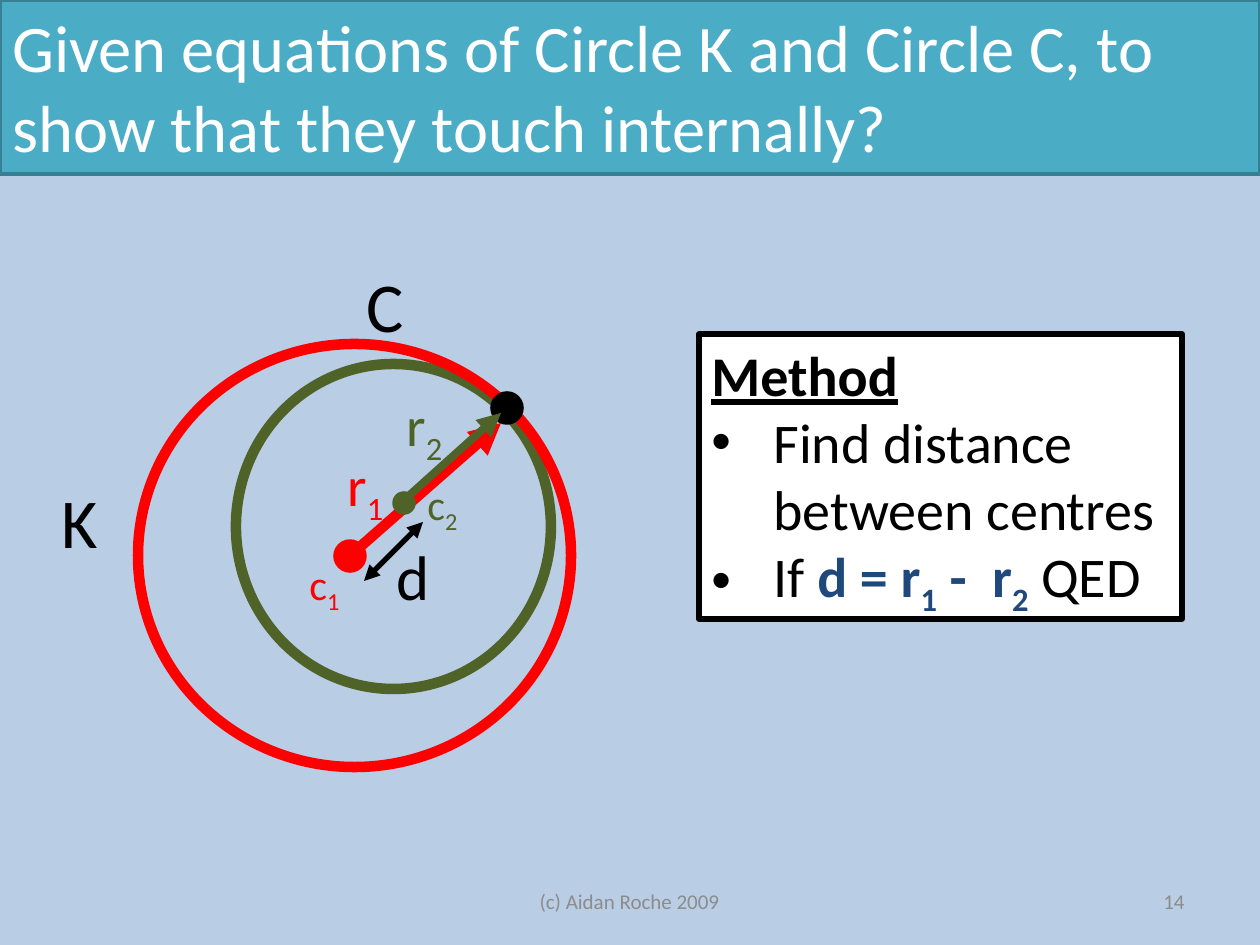
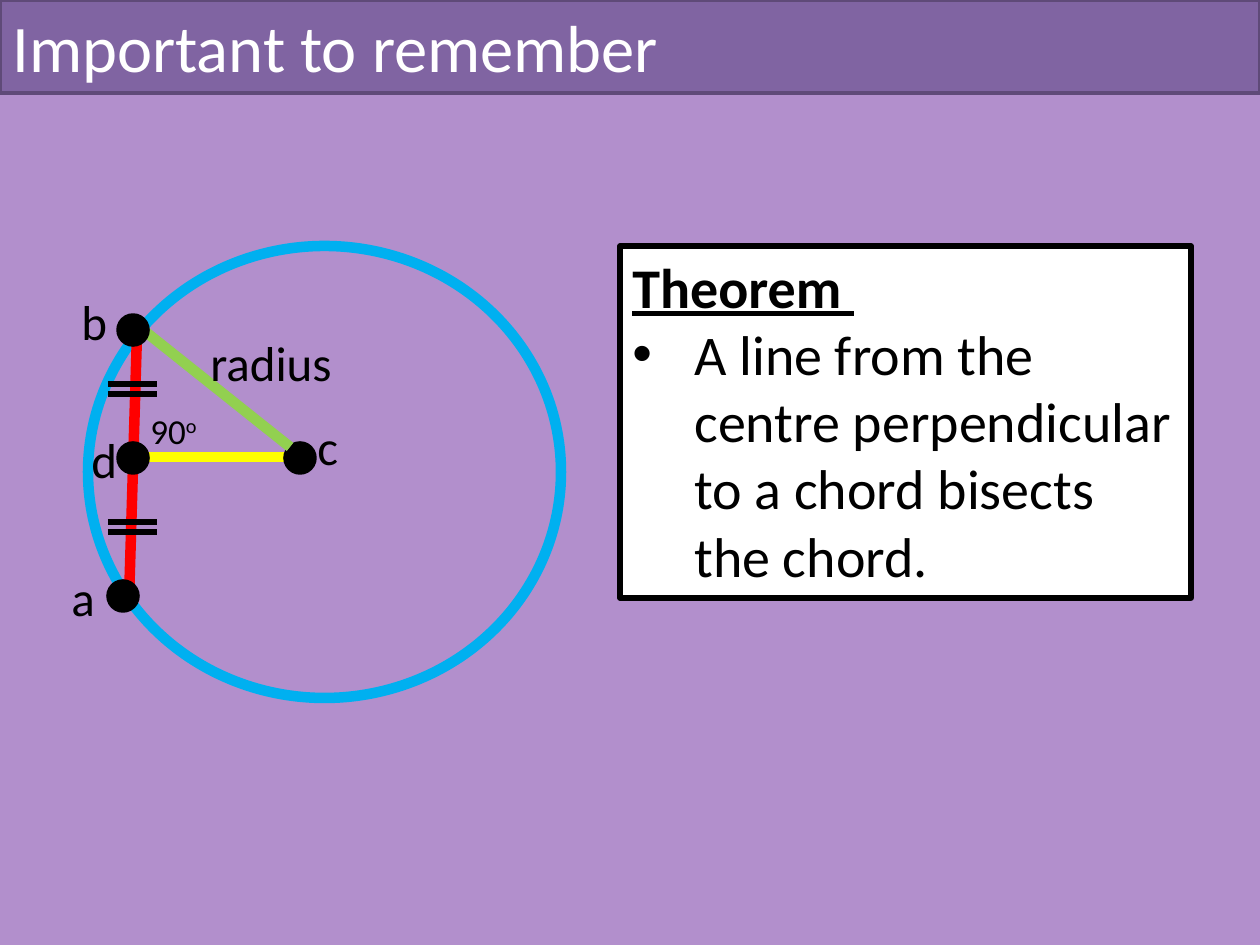
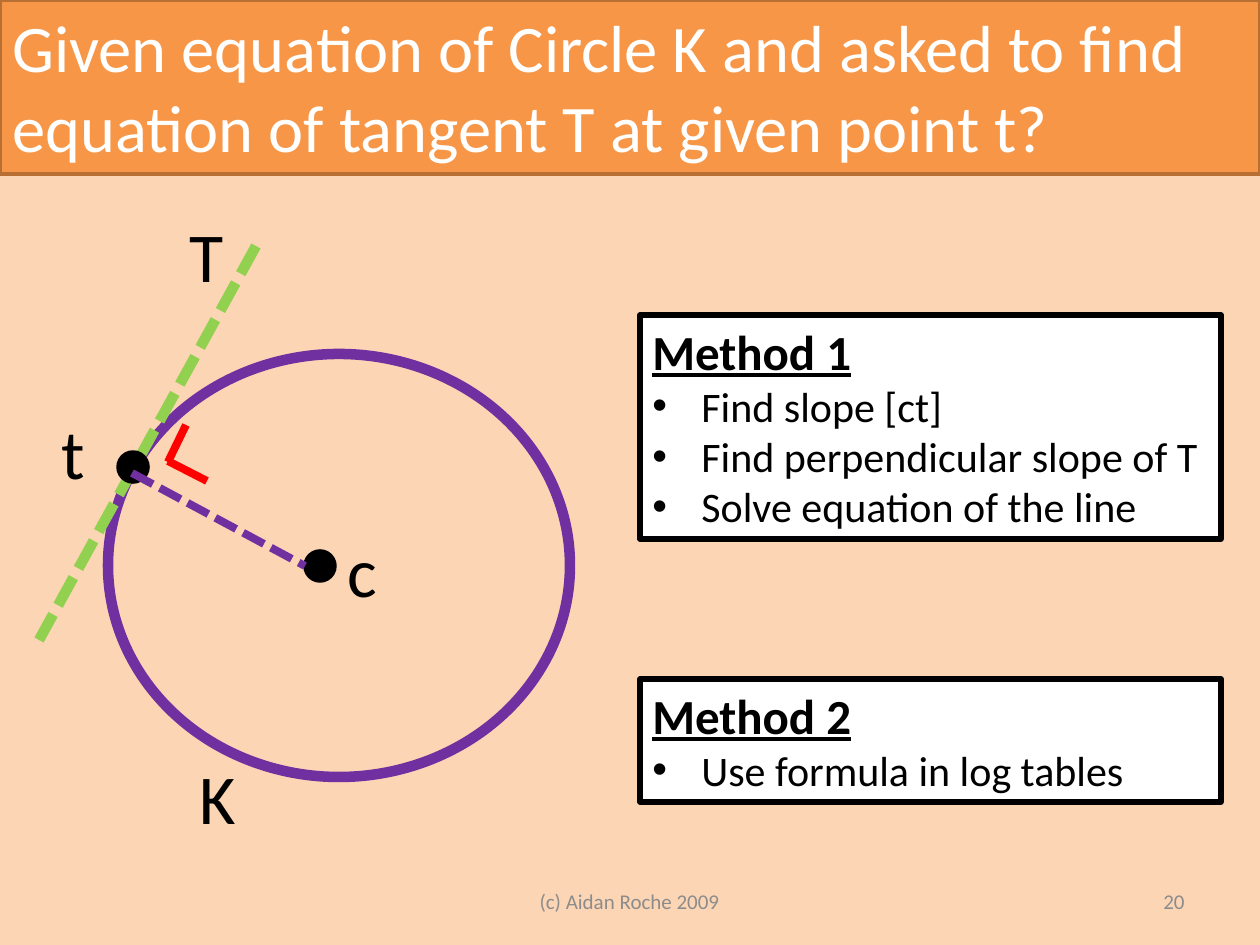
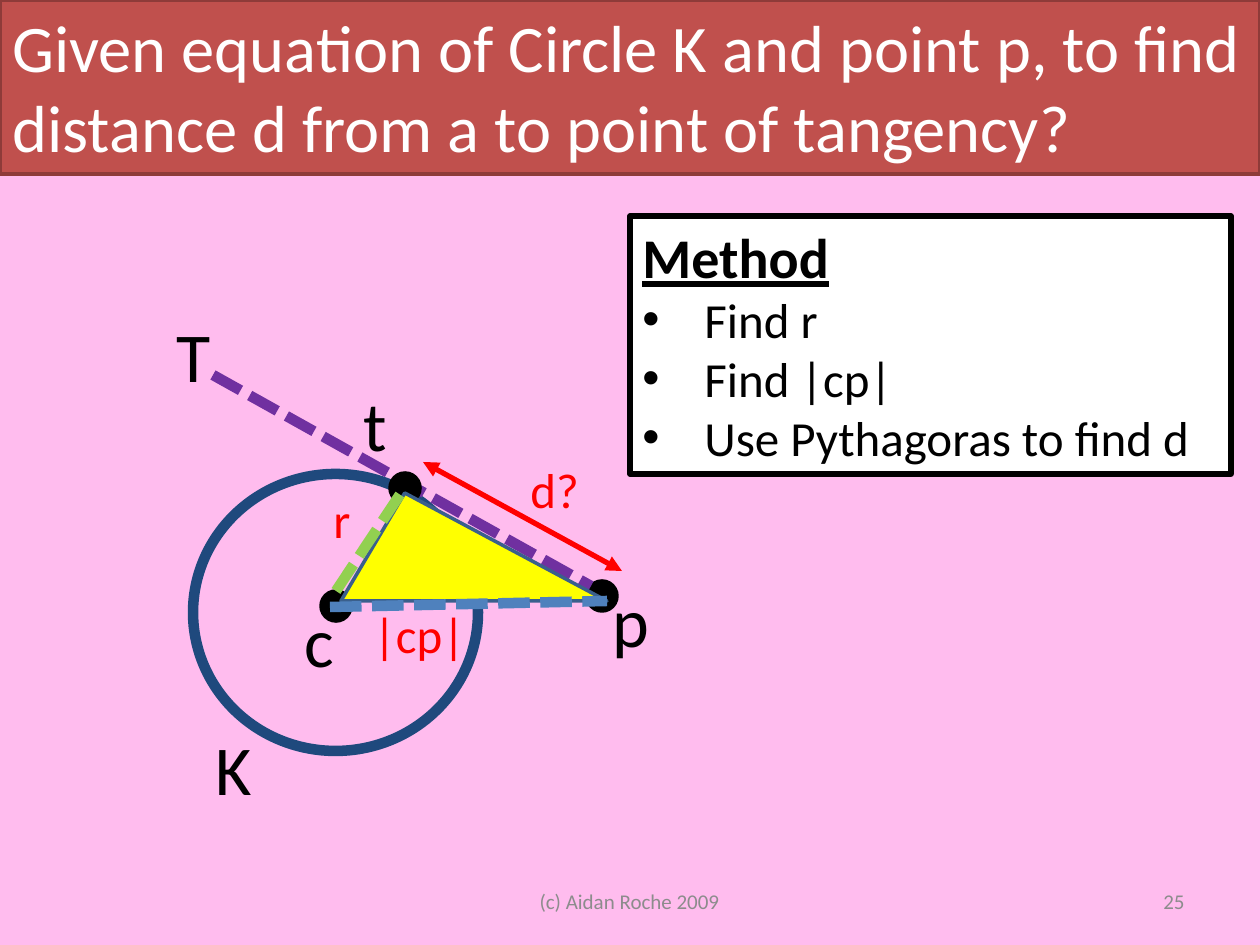
from dataclasses import dataclass

from lxml.etree import SubElement
from pptx import Presentation
from pptx.dml.color import RGBColor
from pptx.enum.dml import MSO_LINE
from pptx.enum.shapes import MSO_CONNECTOR, MSO_SHAPE
from pptx.enum.text import MSO_ANCHOR as Anchor, MSO_AUTO_SIZE as AutoSize, PP_ALIGN as Align
from pptx.oxml.ns import qn
from pptx.util import Emu, Pt

FONT = "Calibri"
PAGE_WIDTH, PAGE_HEIGHT = 1260, 945
BLACK, WHITE, GREY = "000000", "FFFFFF", "8C8C8C"
RED, YELLOW, LIME, OLIVE = "FF0000", "FFFF00", "92D050", "4F6228"
PURPLE, SKY, NAVY, BLUE = "7030A0", "00B0F0", "1F497D", "4F81BD"
SUB, SUPER = -25, 30


def px(length):
    return Emu(round(length * 914400 / 126))


def colour(value):
    return RGBColor.from_string(value)


def set_font(font, size=None, ink=None, bold=None, underline=None):
    font.name = FONT
    if size:
        font.size = Pt(size)
    if ink:
        font.color.rgb = colour(ink)
    font.bold = bold
    font.underline = underline


def add_spans(para, spans):
    """Each span is plain text or a (text, baseline, ink) tuple; inked spans are bold."""
    for item in spans:
        text, baseline, ink = (item, 0, None) if isinstance(item, str) else item
        span = para.add_run()
        span.text = text
        if ink:
            span.font.color.rgb = colour(ink)
            span.font.bold = True
        if baseline:
            span.font._element.set("baseline", str(baseline * 1000))


def set_indent(para, indent, bullet=None):
    properties = para._p.get_or_add_pPr()
    properties.set("marL", str(px(indent)))
    properties.set("indent", str(-px(indent)))
    if bullet:
        SubElement(properties, qn("a:buFont"), typeface="Arial")
        SubElement(properties, qn("a:buChar"), char=bullet)


@dataclass
class Region:
    """A part of a page; everything is placed from its top left corner."""
    page: object
    left: int
    top: int

    def shape(self, kind, left, top, width, height, fill=None, line=BLACK, weight=2):
        shape = self.page.shapes.add_shape(
            kind, px(self.left + left), px(self.top + top), px(width), px(height))
        shape.shadow.inherit = False
        if fill:
            shape.fill.solid()
            shape.fill.fore_color.rgb = colour(fill)
        else:
            shape.fill.background()
        shape.line.color.rgb = colour(line)
        shape.line.width = Pt(weight)
        return shape

    def ring(self, left, top, width, height, line):
        self.shape(MSO_SHAPE.OVAL, left, top, width, height, None, line, 6)

    def dot(self, centre_x, centre_y, ink=BLACK, size=30):
        self.shape(MSO_SHAPE.OVAL, centre_x - size // 2, centre_y - size // 2,
                   size, size, ink, ink)

    def line(self, start, end, ink, weight=6, dashed=False, arrows=()):
        line = self.page.shapes.add_connector(
            MSO_CONNECTOR.STRAIGHT,
            px(self.left + start[0]), px(self.top + start[1]),
            px(self.left + end[0]), px(self.top + end[1]))
        line.line.color.rgb = colour(ink)
        line.line.width = Pt(weight)
        if dashed:
            line.line.dash_style = MSO_LINE.SQUARE_DOT
        for arrow in arrows:
            SubElement(line.line._get_or_add_ln(), qn(f"a:{arrow}"), type="triangle")
        SubElement(line._element.spPr, qn("a:effectLst"))

    def text(self, left, top, width, height, spans, size, ink):
        box = self.page.shapes.add_textbox(
            px(self.left + left), px(self.top + top), px(width), px(height))
        para = box.text_frame.paragraphs[0]
        set_font(para.font, size, ink)
        add_spans(para, spans)
        return box.text_frame, para

    def label(self, left, top, width, text, size=40, ink=BLACK, mark=None, baseline=SUB):
        spans = [text] + ([(mark, baseline, None)] if mark else [])
        frame, _ = self.text(left, top, width, round(size * 2.1 + 13), spans, size, ink)
        frame.word_wrap = False
        frame.auto_size = AutoSize.SHAPE_TO_FIT_TEXT


# Parts shared by the slides

def add_band(region, title, height, fill, line):
    band = region.shape(MSO_SHAPE.RECTANGLE, 0, 0, PAGE_WIDTH, height, fill, line)
    frame = band.text_frame
    frame.word_wrap = True
    frame.vertical_anchor = Anchor.TOP
    para = frame.paragraphs[0]
    para.alignment = Align.LEFT
    set_font(para.font, 38, WHITE)
    add_spans(para, [title])


def add_footer(region, number):
    for left, width, text, align in ((0, 399, "(c) Aidan Roche 2009", Align.CENTER),
                                     (473, 294, str(number), Align.RIGHT)):
        frame, para = region.text(left, 0, width, 50, [text], 12, GREY)
        frame.word_wrap = True
        frame.vertical_anchor = Anchor.MIDDLE
        para.alignment = align


def add_panel(region, width, height, heading, points, heading_size=32, size=32, indent=62):
    panel = region.shape(MSO_SHAPE.RECTANGLE, 0, 0, width, height, WHITE, BLACK, 3)
    frame = panel.text_frame
    frame.word_wrap = True
    frame.vertical_anchor = Anchor.TOP
    para = frame.paragraphs[0]
    para.alignment = Align.LEFT
    set_indent(para, 102)
    set_font(para.font, heading_size, BLACK, True, True)
    add_spans(para, [heading])
    for point in points:
        para = frame.add_paragraph()
        para.alignment = Align.LEFT
        set_indent(para, indent, "•")
        set_font(para.font, size, BLACK)
        add_spans(para, [point] if isinstance(point, str) else point)


def start_page(deck, background, title, band_height, band_fill, band_line, number=None):
    page = deck.slides.add_slide(deck.slide_layouts[6])
    page.background.fill.solid()
    page.background.fill.fore_color.rgb = colour(background)
    add_band(Region(page, 0, 0), title, band_height, band_fill, band_line)
    if number:
        add_footer(Region(page, 430, 876), number)
    return page


# Diagrams

def draw_touching_circles(region):
    region.ring(196, 114, 315, 325, OLIVE)
    region.ring(98, 94, 433, 423, RED)
    region.label(9, 222, 118, "K")
    region.label(314, 6, 63, "C")
    # Radii from the two centres to the touching point
    region.line((304, 311), (461, 173), RED, arrows=["tailEnd"])
    region.dot(310, 306, RED)
    region.dot(467, 158)
    region.label(295, 194, 64, "r", 32, RED, "1")
    region.label(354, 134, 64, "r", 32, OLIVE, "2")
    region.line((363, 251), (461, 163), OLIVE, 4.5, arrows=["tailEnd"])
    region.dot(364, 253, OLIVE, 20)
    # Distance between centres
    region.line((324, 331), (383, 272), BLACK, 3, arrows=["headEnd", "tailEnd"])
    region.label(344, 281, 59, "d", 36)
    region.label(257, 302, 58, "c", 24, RED, "1")
    region.label(375, 222, 58, "c", 24, OLIVE, "2")


def draw_bisected_chord(region):
    region.ring(38, 6, 473, 452, SKY)
    # Perpendicular, chord and radius
    region.line((97, 217), (236, 217), YELLOW)
    region.dot(250, 218)
    region.line((79, 361), (87, 95), RED)
    region.line((87, 85), (240, 207), LIME)
    for centre in ((73, 356), (83, 218), (83, 90)):
        region.dot(*centre)
    # Equal-length ticks
    for tick in (144, 154, 282, 292):
        region.line((58, tick), (107, tick), BLACK, 3)
    region.label(88, 163, 168, "90", 20, mark="o", baseline=SUPER)
    for left, top, width, text in ((255, 170, 47, "c"), (9, 321, 49, "a"), (19, 45, 52, "b"),
                                   (29, 183, 52, "d"), (148, 86, 149, "radius")):
        region.label(left, top, width, text, 28)


def draw_tangent(region):
    region.ring(78, 154, 462, 423, PURPLE)
    region.line((226, 46), (9, 440), LIME, dashed=True)
    region.dot(103, 267)
    region.dot(290, 366)
    region.line((102, 273), (275, 366), PURPLE, 4.5, dashed=True)
    # Right angle mark
    region.line((138, 261), (177, 281), RED, 4.5)
    region.line((156, 225), (138, 262), RED, 4.5)
    for left, top, width, text in ((157, 548, 118, "K"), (19, 203, 49, "t"),
                                   (305, 321, 55, "c"), (147, 6, 60, "T")):
        region.label(left, top, width, text)


def draw_tangent_length(region):
    for left, top, width, text in ((43, 419, 118, "K"), (132, 291, 59, "c"), (191, 75, 49, "t"),
                                   (440, 271, 63, "p"), (4, 6, 60, "T")):
        region.label(left, top, width, text)
    region.ring(33, 174, 285, 277, NAVY)
    region.dot(176, 306)
    region.dot(442, 296)
    region.line((53, 75), (431, 286), PURPLE, dashed=True)
    region.dot(245, 188)
    # Right-angled triangle and its sides
    triangle = region.shape(MSO_SHAPE.ISOSCELES_TRIANGLE, 181, 193, 266, 108, YELLOW, "3A5F8C")
    triangle.adjustments[0] = 0.24
    region.line((176, 291), (241, 193), LIME, dashed=True)
    region.line((170, 307), (447, 301), BLUE, dashed=True)
    region.line((263, 162), (462, 271), RED, 3, arrows=["headEnd", "tailEnd"])
    for left, top, width, text in ((161, 183, 43, "r"), (201, 298, 118, "|cp|"),
                                   (358, 153, 98, "d?")):
        region.label(left, top, width, text, 28, RED)


# Slides

def add_touching_slide(deck):
    page = start_page(
        deck, "B9CDE5",
        "Given equations of Circle K and Circle C, to show that they touch internally?",
        174, "4BACC6", "377F92", 14)
    condition = ["If ", ("d = r", 0, NAVY), ("1", SUB, NAVY), (" -  r", 0, NAVY),
                 ("2", SUB, NAVY), " QED"]
    add_panel(Region(page, 699, 334), 483, 285, "Method",
              ["Find distance between centres", condition])
    draw_touching_circles(Region(page, 40, 250))


def add_theorem_slide(deck):
    page = start_page(deck, "B28FCC", "Important to remember", 93, "8064A2", "5F4A78")
    add_panel(Region(page, 620, 246), 571, 352, "Theorem ",
              ["A line from the centre perpendicular to a chord bisects the chord."])
    draw_bisected_chord(Region(page, 50, 240))


def add_tangent_slide(deck):
    page = start_page(
        deck, "FCD5B5",
        "Given equation of Circle K and asked to find equation of tangent T at given point t?",
        174, "F79646", "B76F34", 20)
    draw_tangent(Region(page, 30, 200))
    add_panel(Region(page, 640, 315), 581, 224, "Method 1",
              ["Find slope [ct]", "Find perpendicular slope of T", "Solve equation of the line"],
              28, 24, 49)
    add_panel(Region(page, 640, 679), 581, 123, "Method 2",
              ["Use formula in log tables"], 28, 24, 49)


def add_length_slide(deck):
    page = start_page(
        deck, "FFBCEE",
        "Given equation of Circle K and point p, to find distance d from a to point of tangency?",
        174, "C0504D", "8E3B39", 25)
    add_panel(Region(page, 630, 216), 601, 258, "Method",
              ["Find r", "Find |cp|", "Use Pythagoras to find d"], size=28)
    draw_tangent_length(Region(page, 160, 300))


def main():
    deck = Presentation()
    deck.slide_width, deck.slide_height = px(PAGE_WIDTH), px(PAGE_HEIGHT)
    add_touching_slide(deck)
    add_theorem_slide(deck)
    add_tangent_slide(deck)
    add_length_slide(deck)
    deck.save("out.pptx")


if __name__ == "__main__":
    main()
